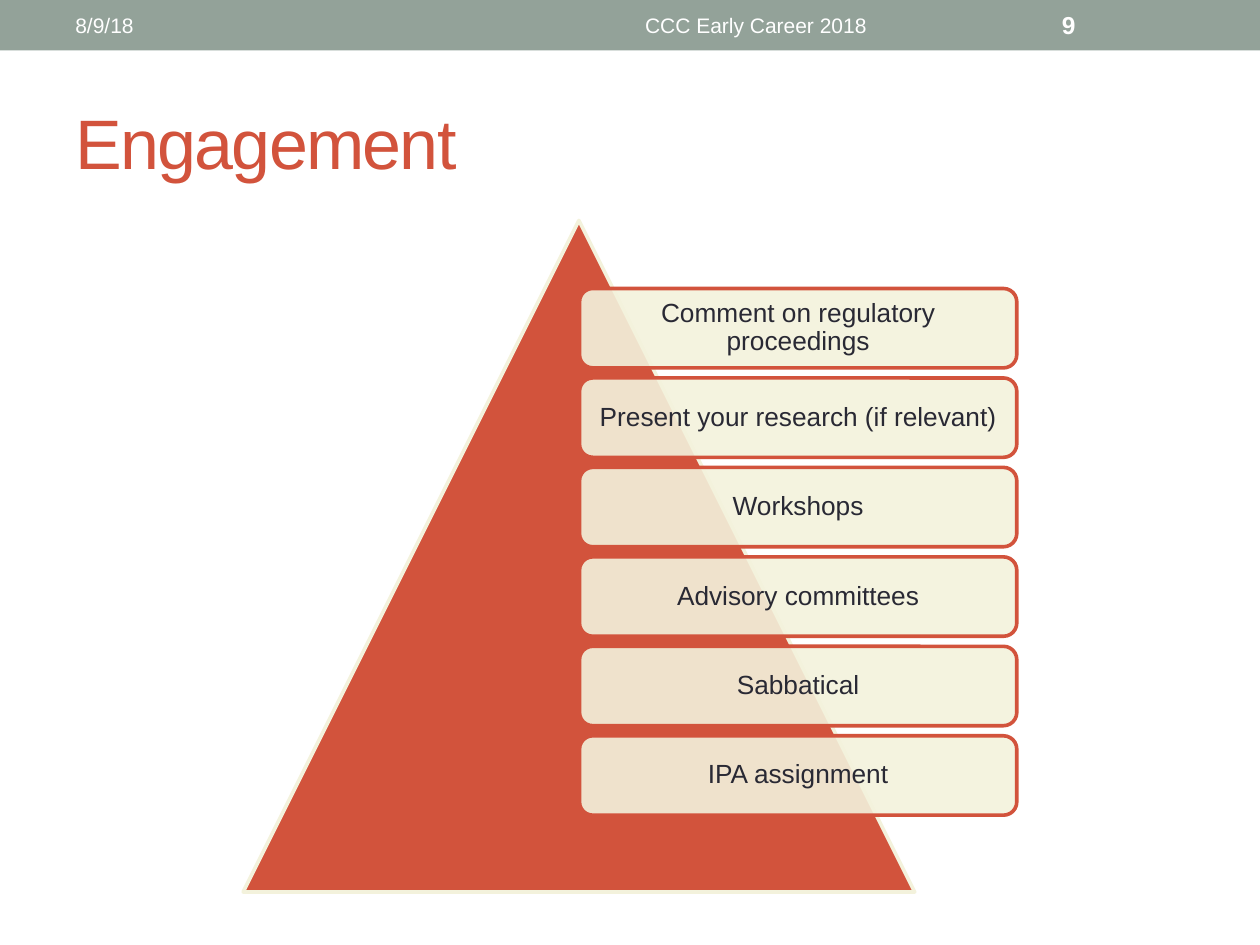
import pptx
import pptx.util
import pptx.dml.color
import pptx.enum.shapes
import pptx.enum.text
from lxml import etree

Inches, Pt = pptx.util.Inches, pptx.util.Pt
SHAPE = pptx.enum.shapes.MSO_SHAPE
ALIGN = pptx.enum.text.PP_ALIGN
MIDDLE = pptx.enum.text.MSO_ANCHOR.MIDDLE
A = "{http://schemas.openxmlformats.org/drawingml/2006/main}"

# Content
TITLE = "Engagement"
STEPS = [
    "Comment on regulatory proceedings",
    "Present your research (if relevant)",
    "Workshops",
    "Advisory committees",
    "Sabbatical",
    "IPA assignment",
]
# text, left, width, alignment, size, bold
HEADER = [
    ("8/9/18", 0.5, 3.17, ALIGN.LEFT, 12, False),
    ("CCC Early Career 2018", 3.75, 4.5, ALIGN.CENTER, 12, False),
    ("9", 8.33, 1.17, ALIGN.LEFT, 14, True),
]
RED, CREAM, SAGE, INK, WHITE = "D2533C", "F3F2DC", "93A299", "292934", "FFFFFF"
CARD_TOP, CARD_STEP = 2.29, 0.71


def rgb(value):
    return pptx.dml.color.RGBColor.from_string(value)


def add_shape(s, kind, box, fill, line=None):
    sp = s.shapes.add_shape(kind, *map(Inches, box))
    sp.shadow.inherit = False
    sp.fill.solid()
    sp.fill.fore_color.rgb = rgb(fill)
    if line:
        sp.line.color.rgb = rgb(line)
        sp.line.width = Pt(2.08)
    else:
        sp.line.fill.background()
    return sp


def write(sp, text, size, color, align, bold=False):
    tf = sp.text_frame
    tf.word_wrap = True
    tf.vertical_anchor = MIDDLE
    p = tf.paragraphs[0]
    p.alignment = align
    r = p.add_run()
    r.text = text
    r.font.name = "Arial"
    r.font.size = Pt(size)
    r.font.bold = bold
    r.font.color.rgb = rgb(color)
    return tf, p, r


prs = pptx.Presentation()
prs.slide_width, prs.slide_height = Inches(10), Inches(7.5)
s = prs.slides.add_slide(prs.slide_layouts[5])

# Title
title = s.shapes.title
title.left, title.top, title.width, title.height = map(Inches, (0.5, 0.58, 9, 1.08))
tf, p, r = write(title, TITLE, 40, RED, ALIGN.LEFT)
r.font._element.set("spc", "-100")

# Header band
add_shape(s, SHAPE.RECTANGLE, (0, 0, 10, 0.4), SAGE)
for text, left, width, align, size, bold in HEADER:
    box = s.shapes.add_textbox(*map(Inches, (left, 0.02, width, 0.36)))
    write(box, text, size, WHITE, align, bold)

# Pyramid
add_shape(s, SHAPE.ISOSCELES_TRIANGLE, (1.93, 1.75, 5.33, 5.33), RED, CREAM)

# Translucent cards over the pyramid
for i, step in enumerate(STEPS):
    card = add_shape(s, SHAPE.ROUNDED_RECTANGLE,
                     (4.6, CARD_TOP + i * CARD_STEP, 3.47, 0.63), CREAM, RED)
    color = card.fill._xPr.find(f"{A}solidFill/{A}srgbClr")
    etree.SubElement(color, A + "alpha", val="90000")
    tf, p, r = write(card, step, 15, INK, ALIGN.CENTER)
    tf.margin_left = tf.margin_right = tf.margin_top = tf.margin_bottom = Inches(0.06)
    p.line_spacing = 0.9

prs.save("out.pptx")
